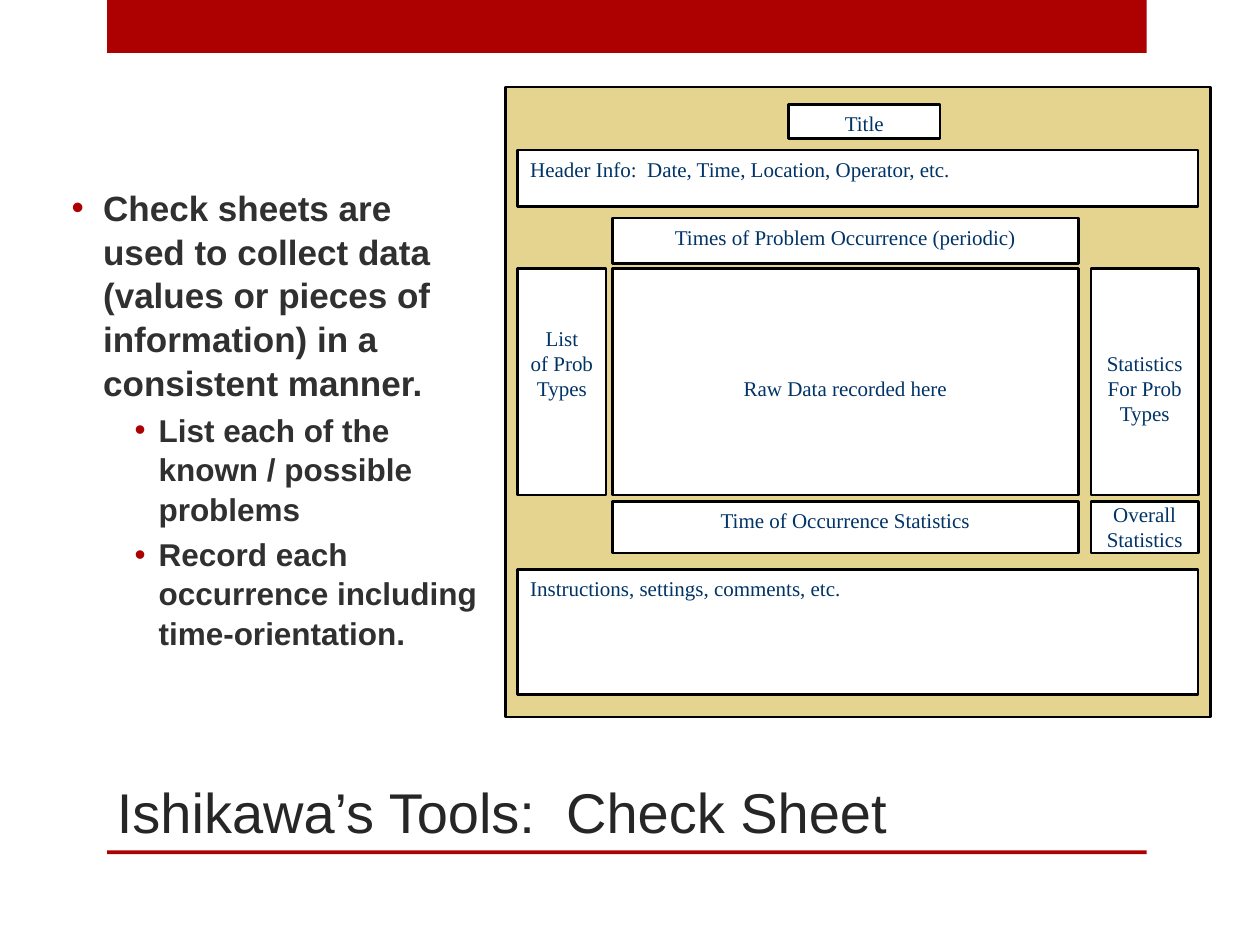
from lxml.etree import SubElement
from pptx import Presentation
from pptx.dml.color import RGBColor
from pptx.enum.shapes import MSO_SHAPE
from pptx.enum.text import MSO_ANCHOR, PP_ALIGN
from pptx.oxml.ns import qn
from pptx.util import Inches, Pt

RED, SAND, WHITE, BLACK, NAVY = "AD0101", "E4D490", "FFFFFF", "000000", "003366"
LEFT, CENTER = PP_ALIGN.LEFT, PP_ALIGN.CENTER
LINE_HEIGHT = 0.2

# Columns (left, width) and rows (top, height) of the check sheet
FULL, TYPES, DATA, TOTALS = (4.11, 5.4), (4.11, 0.7), (4.86, 3.7), (8.66, 0.85)
MAIN_ROW, STATISTICS_ROW = (2.13, 1.8), (3.98, 0.41)

# column, row, alignment, top inset, lines
FIELDS = [
    ((6.26, 1.2), (0.83, 0.27), CENTER, 0.05, ["Title"]),
    (FULL, (1.19, 0.45), LEFT, 0.05, ["Header Info:  Date, Time, Location, Operator, etc."]),
    (TYPES, MAIN_ROW, CENTER, 0.05 + 2 * LINE_HEIGHT, ["List", "of Prob", "Types"]),
    (DATA, (1.73, 0.36), CENTER, 0.05, ["Times of Problem Occurrence (periodic)"]),
    (TOTALS, MAIN_ROW, CENTER, 0.05 + 3 * LINE_HEIGHT, ["Statistics", "For Prob Types"]),
    (DATA, STATISTICS_ROW, CENTER, 0.05, ["Time of Occurrence Statistics"]),
    (TOTALS, STATISTICS_ROW, CENTER, 0, ["Overall Statistics"]),
    (FULL, (4.52, 0.99), LEFT, 0.05, ["Instructions, settings, comments, etc."]),
    (DATA, MAIN_ROW, CENTER, 0.05 + 4 * LINE_HEIGHT, ["Raw Data recorded here"]),
]

# level, text
POINTS = [
    (0, "Check sheets are used to collect data (values or pieces of information) "
        "in a consistent manner."),
    (1, "List each of the known / possible problems"),
    (1, "Record each occurrence including time-orientation."),
]
# size, text indent, hanging width for each level
LEVELS = [(20, 0.25, 0.25), (18, 0.69, 0.19)]


def color(value):
    return RGBColor.from_string(value)


def add_rectangle(shapes, left, top, width, height, fill, line=None):
    box = shapes.add_shape(MSO_SHAPE.RECTANGLE, Inches(left), Inches(top),
                           Inches(width), Inches(height))
    box.shadow.inherit = False
    box.fill.solid()
    box.fill.fore_color.rgb = color(fill)
    if line:
        box.line.color.rgb = color(line)
        box.line.width = Pt(1.5)
    else:
        box.line.fill.background()
    return box


def add_text_box(page, left, top, width, height, anchor):
    box = page.shapes.add_textbox(Inches(left), Inches(top), Inches(width), Inches(height))
    box.text_frame.word_wrap = True
    box.text_frame.vertical_anchor = anchor
    return box.text_frame


def add_span(para, text, font, size, fill, bold=False):
    span = para.add_run()
    span.text = text
    span.font.name = font
    span.font.size = Pt(size)
    span.font.bold = bold
    span.font.color.rgb = color(fill)


def paragraph_at(frame, index):
    """Return the frame's first paragraph, or a new one after it."""
    return frame.add_paragraph() if index else frame.paragraphs[0]


def set_bullet(para, indent, hanging):
    properties = para._p.get_or_add_pPr()
    properties.set("marL", str(Inches(indent)))
    properties.set("indent", str(-Inches(hanging)))
    bullet_color = SubElement(properties, qn("a:buClr"))
    SubElement(bullet_color, qn("a:srgbClr"), val=RED)
    SubElement(properties, qn("a:buFont"), typeface="Arial")
    SubElement(properties, qn("a:buChar"), char="•")


def add_field(shapes, column, row, alignment, top_inset, lines):
    (left, width), (top, height) = column, row
    frame = add_rectangle(shapes, left, top, width, height, WHITE, BLACK).text_frame
    frame.word_wrap = True
    frame.vertical_anchor = MSO_ANCHOR.TOP
    frame.margin_top = Inches(top_inset)
    for index, text in enumerate(lines):
        para = paragraph_at(frame, index)
        para.alignment = alignment
        add_span(para, text, "Times New Roman", 12, NAVY)


def add_title(page):
    frame = add_text_box(page, 0.83, 5.78, 8.37, 0.97, MSO_ANCHOR.BOTTOM)
    add_span(frame.paragraphs[0], "Ishikawa’s Tools:  Check Sheet", "Arial", 32, "262626")


def add_points(page):
    frame = add_text_box(page, 0.47, 1.07, 3.42, 4.5, MSO_ANCHOR.MIDDLE)
    for index, (level, text) in enumerate(POINTS):
        size, indent, hanging = LEVELS[level]
        para = paragraph_at(frame, index)
        para.level = level
        para.line_spacing = 1.04
        para.space_before = Pt(size * 0.2)
        set_bullet(para, indent, hanging)
        add_span(para, text, "Arial", size, "303030", bold=True)


def add_check_sheet(page):
    sheet = page.shapes.add_group_shape()
    add_rectangle(sheet.shapes, 4.01, 0.69, 5.6, 5, SAND, BLACK)
    for field in FIELDS:
        add_field(sheet.shapes, *field)


def main():
    deck = Presentation()
    deck.slide_width, deck.slide_height = Inches(10), Inches(7.5)
    page = deck.slides.add_slide(deck.slide_layouts[6])
    for top, height in ((0, 0.42), (6.75, 0.03)):
        add_rectangle(page.shapes, 0.85, top, 8.25, height, RED)
    add_title(page)
    add_points(page)
    add_check_sheet(page)
    deck.save("out.pptx")


if __name__ == "__main__":
    main()
